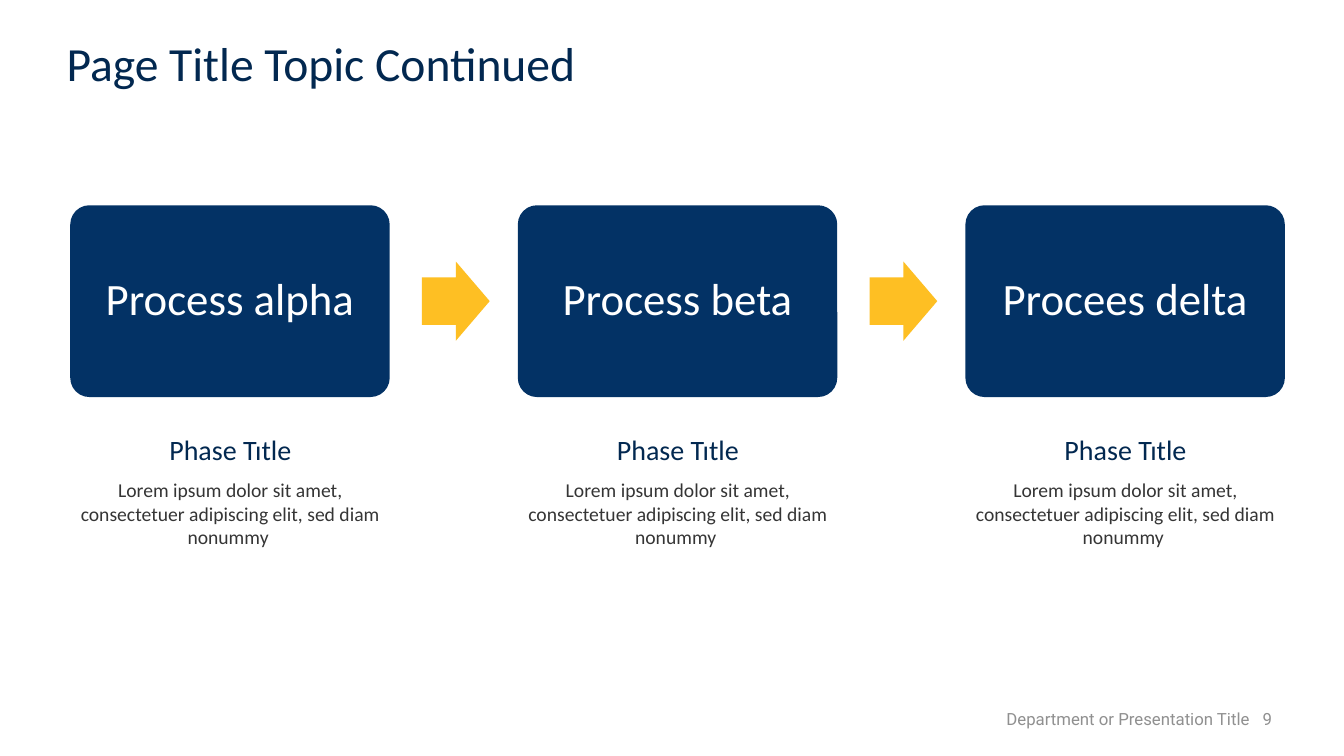
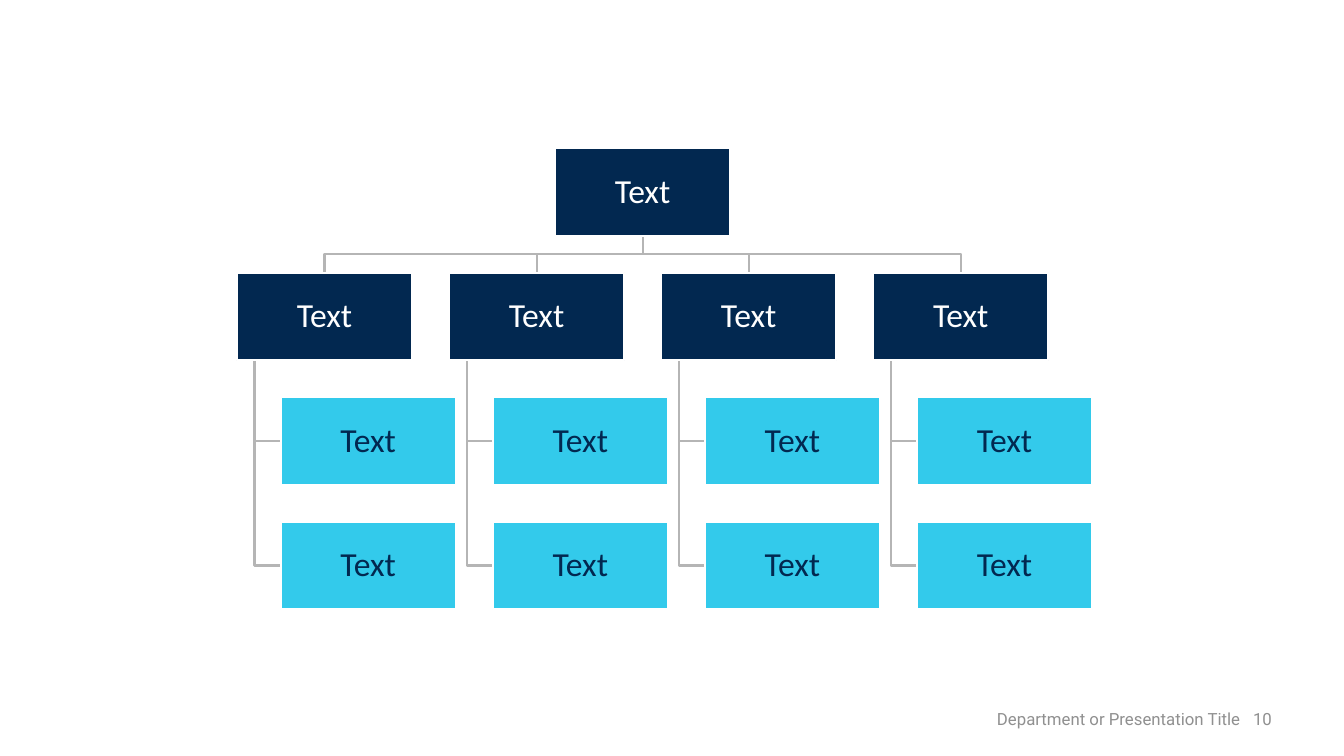
from dataclasses import dataclass
from typing import Any, Optional

import pptx
import pptx.dml.color
import pptx.enum.shapes
import pptx.enum.text
import pptx.oxml.ns
import pptx.util
from lxml import etree

Pt = pptx.util.Pt
ALIGN = pptx.enum.text.PP_ALIGN
ANCHOR = pptx.enum.text.MSO_ANCHOR
AUTO_SIZE = pptx.enum.text.MSO_AUTO_SIZE
SHAPE = pptx.enum.shapes.MSO_SHAPE
TITLE_ONLY, BLANK = 5, 6

COLORS = {
    "navy": "022850",
    "card": "033265",
    "gold": "FEBF23",
    "cyan": "00BDE6",
    "white": "FFFFFF",
    "body": "353535",
    "footer": "909090",
    "line": "B5B5B5",
}


@dataclass(frozen=True)
class Box:
    left: float
    top: float
    width: float
    height: float

    @property
    def center_x(self) -> float:
        return self.left + self.width / 2

    @property
    def center_y(self) -> float:
        return self.top + self.height / 2

    @property
    def bottom(self) -> float:
        return self.top + self.height

    def lengths(self) -> tuple:
        return tuple(Pt(v) for v in (self.left, self.top, self.width, self.height))


@dataclass(frozen=True)
class TextStyle:
    size: float
    color: str
    font: str = "Calibri"
    align: Any = ALIGN.CENTER
    anchor: Any = ANCHOR.MIDDLE
    line_spacing: float = 0.9
    inset: Optional[float] = None
    auto_size: Any = AUTO_SIZE.NONE


@dataclass(frozen=True)
class Phase:
    process: str
    heading: str = "Phase Tıtle"
    body: str = "Lorem ipsum dolor sit amet, consectetuer adipiscing elit, sed diam nonummy "


CAPTION = dict(anchor=ANCHOR.TOP, line_spacing=1.0, auto_size=AUTO_SIZE.SHAPE_TO_FIT_TEXT)
TITLE = TextStyle(34, "navy", align=ALIGN.LEFT, anchor=ANCHOR.BOTTOM)
FOOTER = TextStyle(12, "footer", "Roboto", ALIGN.RIGHT, ANCHOR.BOTTOM)
CARD = TextStyle(32, "white", inset=9.4)
PHASE_HEADING = TextStyle(20, "navy", **CAPTION)
PHASE_BODY = TextStyle(14, "body", **CAPTION)
MANAGER = TextStyle(24, "white", inset=1.4)
MEMBER = TextStyle(24, "navy", inset=1.4)

TITLE_BOX = Box(40.3, 33.8, 720, 35.3)
FOOTER_BOX = Box(548, 500.4, 371.4, 23.8)
FOOTER_TEXT = "Department or Presentation Title"

PHASES = [Phase("Process alpha"), Phase("Process beta"), Phase("Procees delta")]
CARD_BOX = Box(50.2, 146.6, 228.2, 137)
CARD_PITCH = 319.7
ARROW_OFFSET = 251.2
ARROW_WIDTH, ARROW_HEIGHT = 48.4, 56.6

NODE_WIDTH, NODE_HEIGHT = 125, 62.5
CHART_LEFT, CHART_TOP = 169.3, 106
COLUMN_PITCH, ROW_PITCH = 151.5, 88.9
COLUMNS, MEMBERS = 4, 2
MEMBER_INDENT = NODE_WIDTH / 4
SPINE_OFFSET = NODE_WIDTH / 10


def rgb(color: str) -> pptx.dml.color.RGBColor:
    return pptx.dml.color.RGBColor.from_string(COLORS[color])


def apply(target: Any, values: dict) -> None:
    """Set each named attribute of the target."""
    for name, value in values.items():
        setattr(target, name, value)


def write(shape: Any, text: str, style: TextStyle) -> None:
    frame = shape.text_frame
    frame.text = text
    apply(frame, {"word_wrap": True, "vertical_anchor": style.anchor,
                  "auto_size": style.auto_size})
    if style.inset is not None:
        sides = ("left", "top", "right", "bottom")
        apply(frame, {f"margin_{side}": Pt(style.inset) for side in sides})
    paragraph = frame.paragraphs[0]
    apply(paragraph, {"alignment": style.align, "line_spacing": style.line_spacing})
    for run in paragraph.runs:
        format_run(run, style)


def format_run(run: Any, style: TextStyle) -> None:
    apply(run.font, {"name": style.font, "size": Pt(style.size)})
    run.font.color.rgb = rgb(style.color)


def add_text(slide: Any, box: Box, text: str, style: TextStyle) -> Any:
    text_box = slide.shapes.add_textbox(*box.lengths())
    write(text_box, text, style)
    return text_box


def add_filled(slide: Any, kind: Any, box: Box, fill: str,
               adjustments: tuple = ()) -> Any:
    shape = slide.shapes.add_shape(kind, *box.lengths())
    shape.shadow.inherit = False
    shape.fill.solid()
    shape.fill.fore_color.rgb = rgb(fill)
    shape.line.fill.background()
    for index, value in enumerate(adjustments):
        shape.adjustments[index] = value
    return shape


def add_footer(slide: Any, number: int) -> None:
    footer = add_text(slide, FOOTER_BOX, FOOTER_TEXT, FOOTER)
    footer.text_frame.margin_right = Pt(10.8)
    paragraph = footer.text_frame.paragraphs[0]
    for text in (" ", str(number)):
        run = paragraph.add_run()
        run.text = text
        format_run(run, FOOTER)
        if text == " ":
            run.font._element.set("spc", "600")


def add_process_slide(deck: Any, number: int) -> None:
    slide = deck.slides.add_slide(deck.slide_layouts[TITLE_ONLY])
    title = slide.shapes.title
    apply(title, dict(zip(("left", "top", "width", "height"), TITLE_BOX.lengths())))
    write(title, "Page Title Topic Continued", TITLE)

    for index, phase in enumerate(PHASES):
        left = CARD_BOX.left + index * CARD_PITCH
        card_box = Box(left, CARD_BOX.top, CARD_BOX.width, CARD_BOX.height)
        card = add_filled(slide, SHAPE.ROUNDED_RECTANGLE, card_box, "card", (0.1,))
        write(card, phase.process, CARD)
        if index < len(PHASES) - 1:
            arrow_box = Box(left + ARROW_OFFSET, card_box.center_y - ARROW_HEIGHT / 2,
                            ARROW_WIDTH, ARROW_HEIGHT)
            add_filled(slide, SHAPE.RIGHT_ARROW, arrow_box, "gold", (0.6, 0.5))
        add_text(slide, Box(left - 0.5, 305.3, 229.7, 31.5), phase.heading, PHASE_HEADING)
        add_text(slide, Box(left - 0.5, 337.9, 229.7, 58.2), phase.body, PHASE_BODY)
    add_footer(slide, number)


def node_box(left: float, row: int) -> Box:
    return Box(left, CHART_TOP + row * ROW_PITCH, NODE_WIDTH, NODE_HEIGHT)


def add_node(slide: Any, box: Box, fill: str, style: TextStyle,
             opacity: int = 100) -> None:
    node = add_filled(slide, SHAPE.RECTANGLE, box, fill)
    node.line.color.rgb = rgb("white")
    node.line.width = Pt(1.5)
    if opacity < 100:
        color = node.fill._xPr.find(".//" + pptx.oxml.ns.qn("a:srgbClr"))
        alpha = etree.SubElement(color, pptx.oxml.ns.qn("a:alpha"))
        alpha.set("val", str(opacity * 1000))
    write(node, "Text", style)


def add_bent_line(slide: Any, *points: tuple) -> None:
    """Draw an open line with square bends through the points."""
    start, *rest = [(Pt(x), Pt(y)) for x, y in points]
    builder = slide.shapes.build_freeform(*start)
    builder.add_line_segments(rest, close=False)
    line = builder.convert_to_shape()
    line.shadow.inherit = False
    line.fill.background()
    line.line.color.rgb = rgb("line")
    line.line.width = Pt(1.5)


def add_branch_lines(slide: Any, root: Box, manager: Box, members: list) -> None:
    spine_x = manager.left + SPINE_OFFSET
    for member in reversed(members):
        add_bent_line(slide, (spine_x, manager.bottom), (spine_x, member.center_y),
                      (member.left, member.center_y))
    bus_y = (root.bottom + manager.top) / 2
    add_bent_line(slide, (root.center_x, root.bottom), (root.center_x, bus_y),
                  (manager.center_x, bus_y), (manager.center_x, manager.top))


def add_organization_slide(deck: Any, number: int) -> None:
    slide = deck.slides.add_slide(deck.slide_layouts[BLANK])
    root = node_box(CHART_LEFT + (COLUMNS - 1) * COLUMN_PITCH / 2, 0)
    branches = []
    for column in range(COLUMNS):
        left = CHART_LEFT + column * COLUMN_PITCH
        members = [node_box(left + MEMBER_INDENT, 2 + i) for i in range(MEMBERS)]
        branches.append((node_box(left, 1), members))

    for manager, members in reversed(branches):
        add_branch_lines(slide, root, manager, members)
    add_node(slide, root, "navy", MANAGER)
    for manager, members in branches:
        add_node(slide, manager, "navy", MANAGER)
        for member in members:
            add_node(slide, member, "cyan", MEMBER, opacity=80)
    add_footer(slide, number)


def main() -> None:
    deck = pptx.Presentation()
    apply(deck, {"slide_width": Pt(960), "slide_height": Pt(540)})
    add_process_slide(deck, 9)
    add_organization_slide(deck, 10)
    deck.save("out.pptx")


if __name__ == "__main__":
    main()
